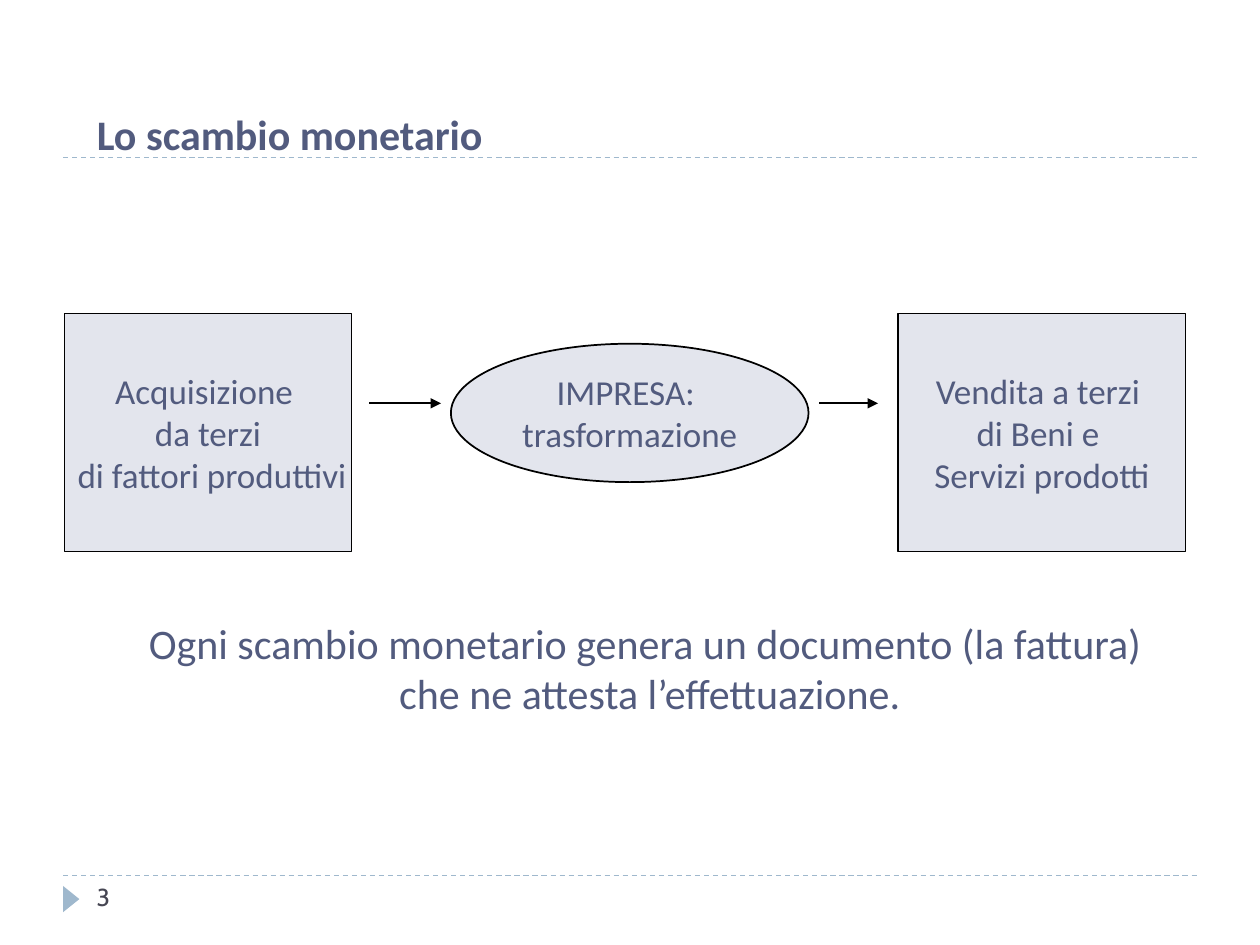
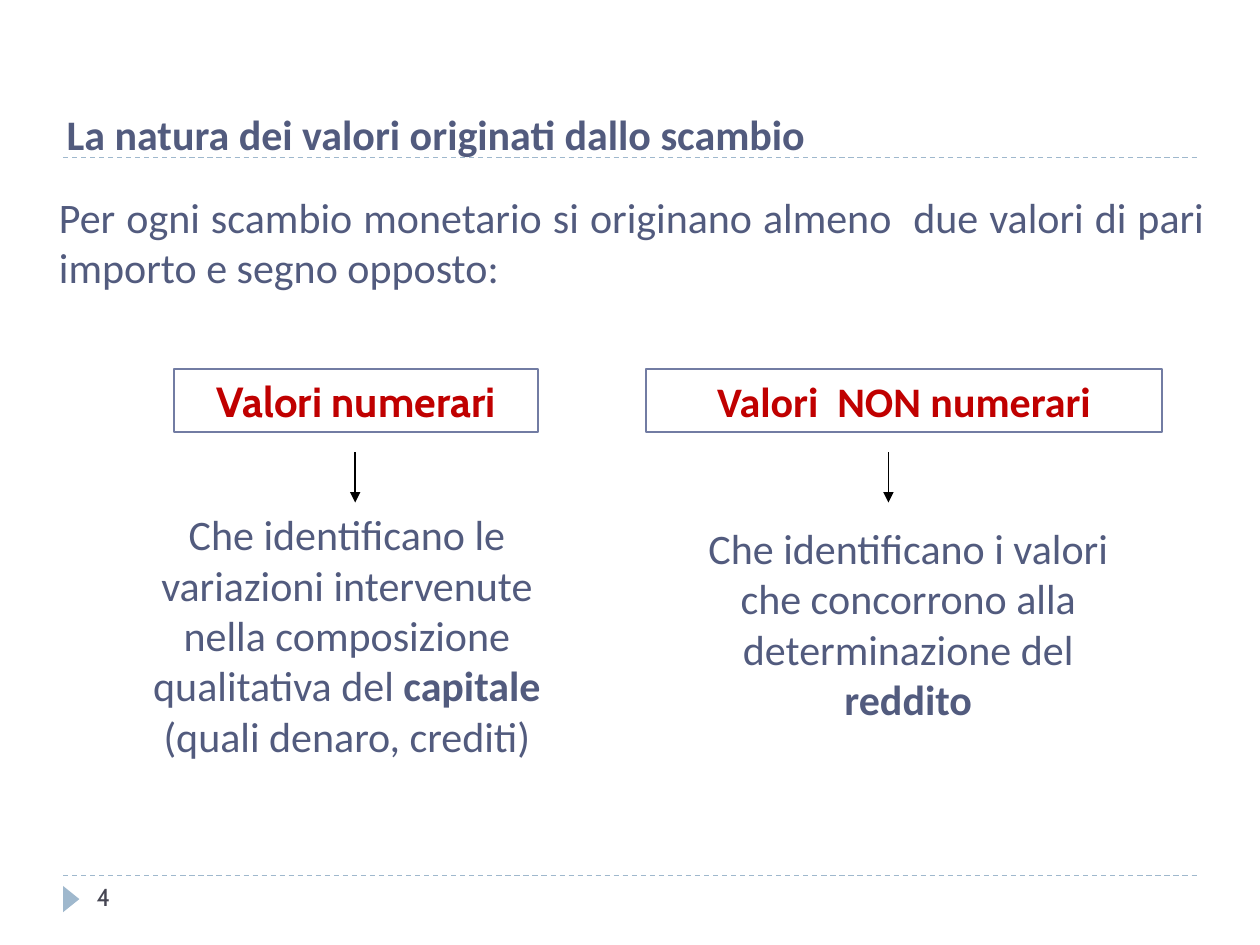
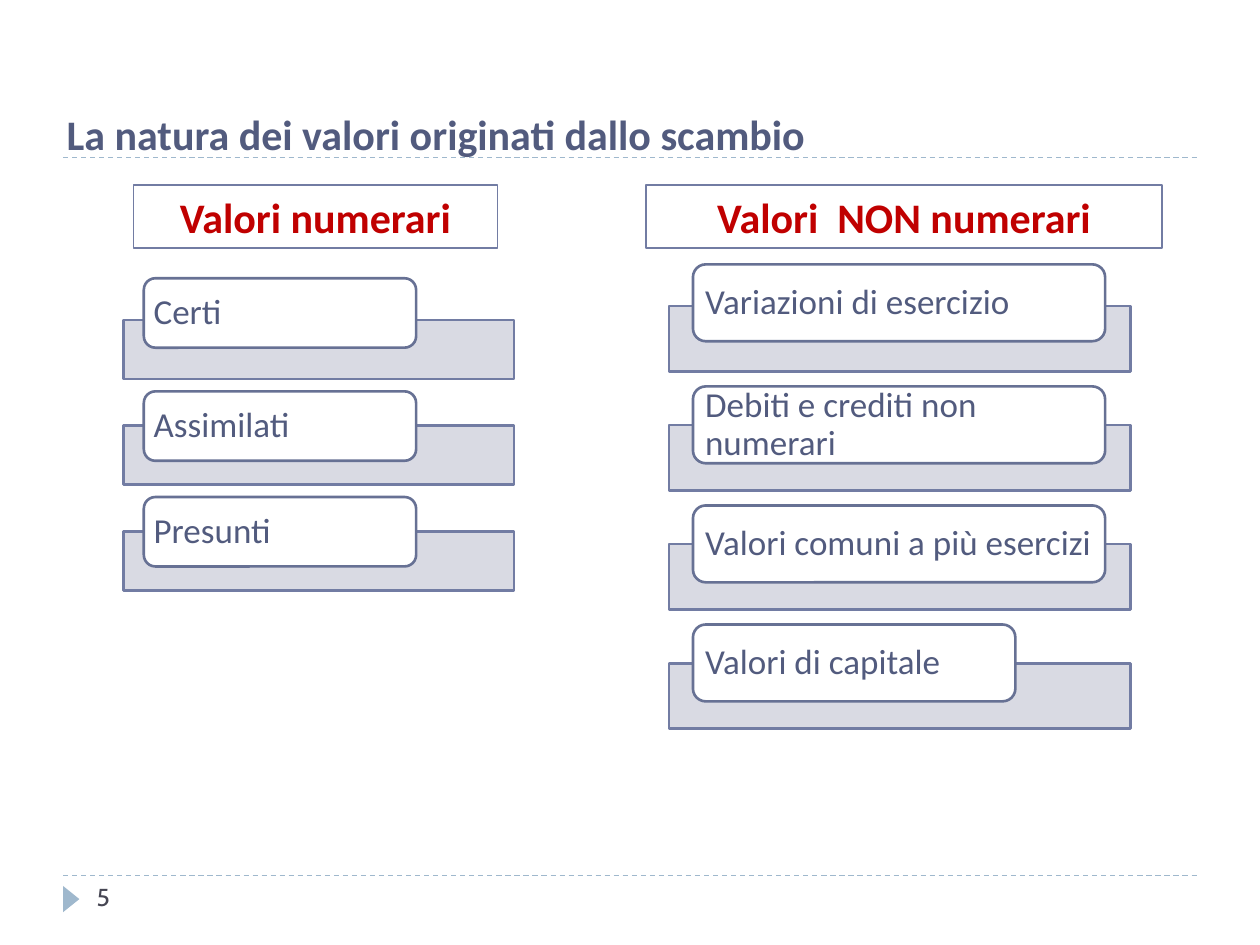
"""Build three slides on monetary exchange and the values it originates."""
from lxml import etree
from pptx import Presentation
from pptx import util as u
from pptx.dml import color as colors
from pptx.enum import dml, shapes, text
from pptx.oxml import ns

INK, ACCENT, SKY, BLACK, RED = "525B7E", "727CA3", "9FB8CD", "000000", "C00000"
PANEL, BAR, TAB_LINE, NUMBER, WHITE = "E3E5ED", "D5D7E0", "677194", "464653", "FFFFFF"
KIND = shapes.MSO_SHAPE
STRAIGHT = shapes.MSO_CONNECTOR.STRAIGHT
hex_color = colors.RGBColor.from_string

TOP = {"word_wrap": True, "auto_size": text.MSO_AUTO_SIZE.NONE,
       "vertical_anchor": text.MSO_ANCHOR.TOP}
MIDDLE = {**TOP, "vertical_anchor": text.MSO_ANCHOR.MIDDLE}
LEFT = {"alignment": text.PP_ALIGN.LEFT}
CENTER = {"alignment": text.PP_ALIGN.CENTER}
JUSTIFY = {"alignment": text.PP_ALIGN.JUSTIFY}
LARGE = {"name": "Calibri", "size": u.Pt(24), "bold": False}
MEDIUM = {**LARGE, "size": u.Pt(20)}
STRONG = {**LARGE, "bold": True}


def write(shape, lines, frame_format, paragraph_format, font_format, ink=INK):
    """Write one paragraph per line; parts between asterisks are bold."""
    frame = shape.text_frame
    for name, value in frame_format.items():
        setattr(frame, name, value)
    for number, line in enumerate(lines):
        paragraph = frame.add_paragraph() if number else frame.paragraphs[0]
        for name, value in paragraph_format.items():
            setattr(paragraph, name, value)
        for index, part in enumerate(line.split("*")):
            run = paragraph.add_run()
            run.text = part
            for name, value in font_format.items():
                setattr(run.font, name, value)
            run.font.color.rgb = hex_color(ink)
            if index % 2:
                run.font.bold = True


def style(shape, fill=None, line=None, width=1):
    """Set fill and line, and switch the shadow off."""
    if fill:
        shape.fill.solid()
        shape.fill.fore_color.rgb = hex_color(fill)
    elif hasattr(shape, "fill"):
        shape.fill.background()
    if line:
        shape.line.color.rgb = hex_color(line)
        shape.line.width = u.Pt(width)
    else:
        shape.line.fill.background()
    etree.SubElement(shape.element.spPr, ns.qn("a:effectLst"))


presentation = Presentation()
presentation.slide_width, presentation.slide_height = u.Cm(25.4), u.Cm(19.05)
layout = presentation.slide_layouts[5]

titles = [
    (1.7, "Lo scambio monetario"),
    (1.09, "La natura dei valori originati dallo scambio"),
    (1.09, "La natura dei valori originati dallo scambio"),
]
slides = []
for number, (left, title) in enumerate(titles, start=3):
    slide = presentation.slides.add_slide(layout)
    slides.append(slide)
    shape = slide.shapes.title
    place = {"left": left, "top": 2.06, "width": 22.63, "height": 1.27}
    for name, value in place.items():
        setattr(shape, name, u.Cm(value))
    write(shape, [title], TOP, LEFT, STRONG)
    box = slide.shapes.add_textbox(u.Cm(1.7), u.Cm(17.65), u.Cm(5.5), u.Cm(1.02))
    write(box, [str(number)], TOP, LEFT, {"name": "Cabin", "size": u.Pt(14)}, NUMBER)
exchange, nature, classes = slides

shared = []
for top in (17.65, 3.18):
    rule = exchange.shapes.add_connector(STRAIGHT, u.Cm(1.27), u.Cm(top), u.Cm(24.13), u.Cm(top))
    style(rule, line=SKY, width=0.75)
    rule.line.dash_style = dml.MSO_LINE.DASH
    shared.append(rule)
marker = exchange.shapes.add_shape(
    KIND.ISOSCELES_TRIANGLE, u.Cm(1.17), u.Cm(17.96), u.Cm(0.53), u.Cm(0.33))
marker.rotation = 90
style(marker, SKY)
shared.append(marker)
for shape in shared:
    layout.shapes.element.append(shape.element)

stages = [
    (KIND.OVAL, (9.09, 6.93, 7.21, 2.79), ["IMPRESA: ", "trasformazione"]),
    (KIND.RECTANGLE, (1.3, 6.32, 5.79, 4.8),
     ["Acquisizione ", "da terzi", " di fattori produttivi"]),
    (KIND.RECTANGLE, (18.11, 6.32, 5.79, 4.8),
     ["Vendita a terzi ", "di Beni e ", "Servizi prodotti"]),
]
for kind, place, lines in stages:
    stage = exchange.shapes.add_shape(kind, *map(u.Cm, place))
    style(stage, PANEL, BLACK)
    write(stage, lines, {**MIDDLE, "word_wrap": False}, CENTER, MEDIUM)

arrows = [
    (exchange, (7.44, 8.13, 8.89, 8.13)),
    (exchange, (16.51, 8.13, 17.7, 8.13)),
    (nature, (7.16, 9.12, 7.16, 10.13)),
    (nature, (17.91, 9.12, 17.91, 10.13)),
]
for slide, ends in arrows:
    arrow = slide.shapes.add_connector(STRAIGHT, *map(u.Cm, ends))
    style(arrow, line=BLACK)
    etree.SubElement(arrow.element.spPr.find(ns.qn("a:ln")), ns.qn("a:tailEnd"), type="triangle")

passages = [
    (exchange, (1.3, 12.32, 23.6, 3.33), CENTER,
     ["Ogni scambio monetario genera un documento (la fattura) ",
      "che ne attesta l’effettuazione."]),
    (nature, (0.94, 3.73, 23.6, 4.37), JUSTIFY,
     ["Per ogni scambio monetario si originano almeno  due valori di pari "
      "importo e segno opposto:"]),
    (nature, (2.69, 10.13, 8.61, 5.38), CENTER,
     ["Che identificano le variazioni intervenute nella composizione "
      "qualitativa del *capitale* (quali denaro, crediti)"]),
    (nature, (13.41, 10.41, 9.8, 4.37), CENTER,
     ["Che identificano i valori che concorrono alla determinazione del *reddito*"]),
]
for slide, place, alignment, lines in passages:
    box = slide.shapes.add_textbox(*map(u.Cm, place))
    write(box, lines, TOP, alignment, LARGE)

headings = [
    (nature, 3.51, 7.44, 7.34, "Valori numerari", "Cabin"),
    (nature, 13.03, 7.44, 10.39, "Valori  NON numerari", "Calibri"),
    (classes, 2.69, 3.73, 7.34, "Valori numerari", "Calibri"),
    (classes, 13.03, 3.73, 10.39, "Valori  NON numerari", "Calibri"),
]
for slide, left, top, width, heading, font_name in headings:
    box = slide.shapes.add_shape(
        KIND.RECTANGLE, u.Cm(left), u.Cm(top), u.Cm(width), u.Cm(1.27))
    style(box, line=ACCENT)
    write(box, [heading], TOP, CENTER, {**STRONG, "name": font_name}, RED)

stacks = [
    {"bar": (2.49, 6.45, 7.87, 1.19), "pitch": 2.13, "tab": (2.9, 1.4), "lift": 0.69,
     "first_lift": 0.84, "margin": 0.13,
     "items": [("Certi", 5.49), ("Assimilati", 5.49), ("Presunti", 5.49)]},
    {"bar": (13.49, 6.17, 9.3, 1.32), "pitch": 2.4, "tab": (13.97, 1.55), "lift": 0.78,
     "first_lift": 0.84, "margin": 0.17,
     "items": [("Variazioni di esercizio", 8.31), ("Debiti e crediti non numerari", 8.31),
               ("Valori comuni a più esercizi", 8.31), ("Valori di capitale", 6.5)]},
]
for stack in stacks:
    group = classes.shapes.add_group_shape()
    left, first_top, width, height = stack["bar"]
    tab_left, tab_height = stack["tab"]
    margin = u.Cm(stack["margin"])
    tab_frame = {**MIDDLE, "margin_left": margin, "margin_right": margin,
                 "margin_top": 0, "margin_bottom": 0}
    for row, (label, tab_width) in enumerate(stack["items"]):
        top = first_top + row * stack["pitch"]
        bar = group.shapes.add_shape(
            KIND.RECTANGLE, u.Cm(left), u.Cm(top), u.Cm(width), u.Cm(height))
        style(bar, BAR, ACCENT, 1.5)
        fill_color = bar.element.spPr.find(ns.qn("a:solidFill"))[0]
        etree.SubElement(fill_color, ns.qn("a:alpha"), val="90000")
        tab_top = top - stack["lift" if row else "first_lift"]
        tab = group.shapes.add_shape(
            KIND.ROUNDED_RECTANGLE, u.Cm(tab_left), u.Cm(tab_top),
            u.Cm(tab_width), u.Cm(tab_height))
        style(tab, WHITE, TAB_LINE, 1.5)
        write(tab, [label], tab_frame, {**LEFT, "line_spacing": 0.9}, MEDIUM)

presentation.save("out.pptx")
